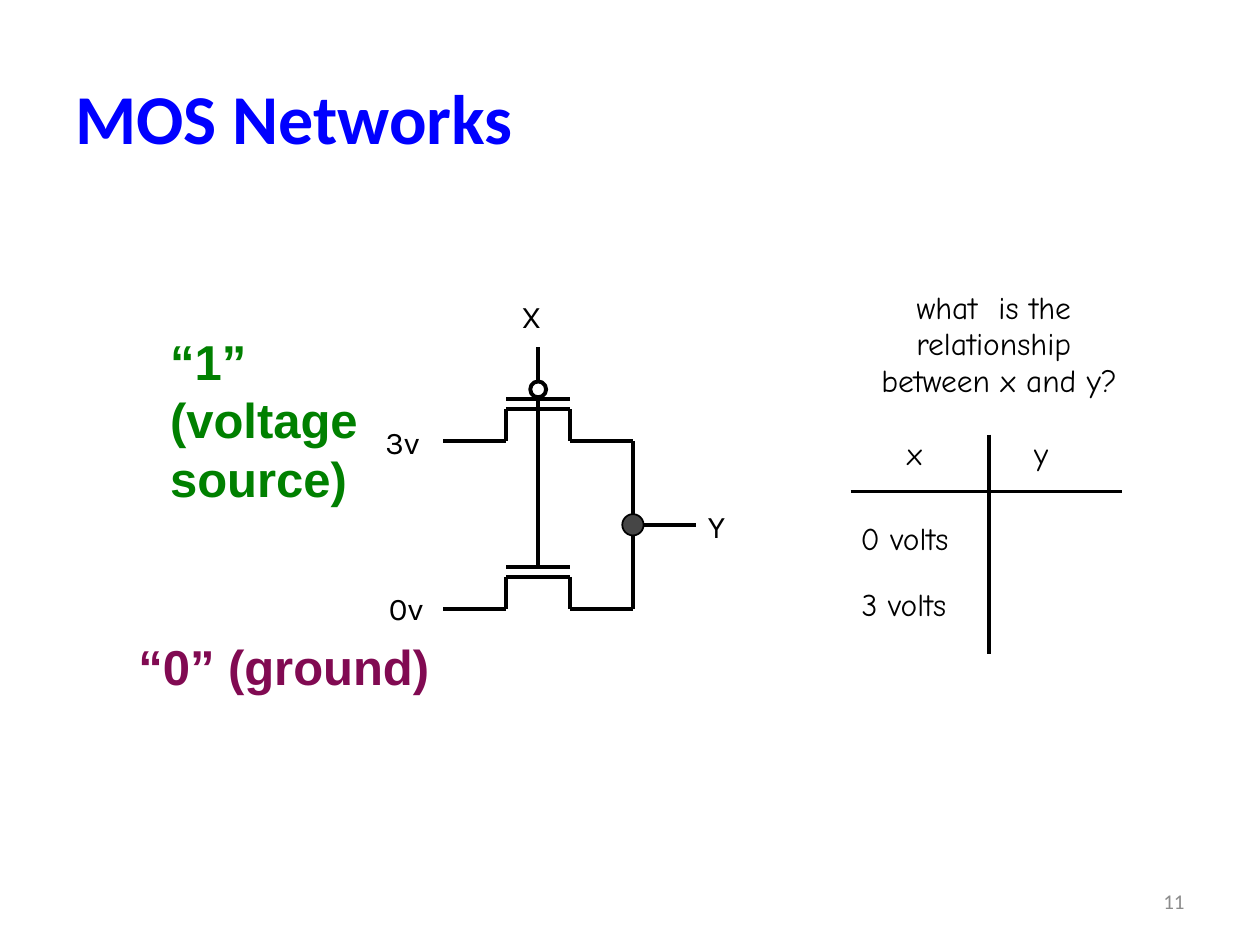
from lxml.etree import SubElement
from pptx import Presentation
from pptx.dml.color import RGBColor
from pptx.enum.shapes import MSO_CONNECTOR as Connector, MSO_SHAPE as Shape
from pptx.enum.text import MSO_ANCHOR as Anchor, PP_ALIGN as Align
from pptx.oxml.ns import qn
from pptx.util import Cm, Pt

BLACK = RGBColor(0x00, 0x00, 0x00)
WHITE = RGBColor(0xFF, 0xFF, 0xFF)
BLUE = RGBColor(0x00, 0x00, 0xFF)
GREEN = RGBColor(0x00, 0x80, 0x00)
PLUM = RGBColor(0x81, 0x0A, 0x52)
DARK_GRAY = RGBColor(0x46, 0x46, 0x46)
LIGHT_GRAY = RGBColor(0x8C, 0x8C, 0x8C)

GATE_X = 10.85
HALF_CHANNEL = 0.64
LEAD = 1.27
OUTPUT_X = GATE_X + HALF_CHANNEL + LEAD
SOURCE_Y, GROUND_Y = 8.89, 12.27
OUTPUT_Y = 10.58

TITLE = {"name": "Calibri", "size": Pt(40), "bold": True}
CALLOUT = {"name": "Arial", "size": Pt(28), "bold": True}
PIN = {"name": "Karla", "size": Pt(18)}
QUESTION = {"name": "Comic Neue", "size": Pt(18)}
NUMBER = {"name": "Calibri", "size": Pt(12)}


def add_text(page, text, place, font, color, frame_format=None, para_format=None):
    box = page.shapes.add_textbox(*map(Cm, place))
    frame = box.text_frame
    for name, value in (frame_format or {}).items():
        setattr(frame, name, value)
    para = frame.paragraphs[0]
    para.text = text
    for name, value in (para_format or {}).items():
        setattr(para, name, value)
    for span in para.runs:
        for name, value in font.items():
            setattr(span.font, name, value)
        span.font.color.rgb = color


def add_label(page, text, place, font, alignment=Align.LEFT):
    frame_format = {"word_wrap": False, "margin_left": Cm(0.05), "margin_right": Cm(0.05),
                    "margin_top": Cm(0.08), "margin_bottom": Cm(0.08)}
    add_text(page, text, place, font, BLACK, frame_format,
             {"alignment": alignment, "line_spacing": Pt(21)})


def add_wire(page, points, width=2.25):
    for start, end in zip(points, points[1:]):
        wire = page.shapes.add_connector(Connector.STRAIGHT, *map(Cm, start + end))
        wire.line.color.rgb = BLACK
        wire.line.width = Pt(width)
        SubElement(wire._element.spPr, qn("a:effectLst"))


def add_circle(page, x, y, diameter, fill, width):
    corner = (x - diameter / 2, y - diameter / 2)
    circle = page.shapes.add_shape(Shape.OVAL, *map(Cm, corner + (diameter, diameter)))
    circle.shadow.inherit = False
    circle.fill.solid()
    circle.fill.fore_color.rgb = fill
    circle.line.color.rgb = BLACK
    circle.line.width = Pt(width)


def add_transistor(page, base, inverted):
    left, right = GATE_X - HALF_CHANNEL, GATE_X + HALF_CHANNEL
    channel, gate = base - 0.64, base - 0.84
    add_wire(page, [(left - LEAD, base), (left, base), (left, channel),
                    (right, channel), (right, base), (OUTPUT_X, base)])
    add_wire(page, [(left, gate), (right, gate)])
    add_wire(page, [(GATE_X, gate), (GATE_X, gate - 0.63)])
    if inverted:
        add_circle(page, GATE_X, gate - 0.2, 0.32, WHITE, 2.25)


def add_circuit(page):
    add_wire(page, [(GATE_X, 11.02), (GATE_X, 6.99)])
    add_wire(page, [(OUTPUT_X, SOURCE_Y), (OUTPUT_X, GROUND_Y)])
    add_wire(page, [(OUTPUT_X, OUTPUT_Y), (OUTPUT_X + LEAD, OUTPUT_Y)])
    add_transistor(page, GROUND_Y, inverted=False)
    add_transistor(page, SOURCE_Y, inverted=True)
    add_circle(page, OUTPUT_X, OUTPUT_Y, 0.43, DARK_GRAY, 1)
    for text, left, top in (("X", 10.46, 5.92), ("Y", 14.22, 10.16),
                            ("3v", 7.72, 8.46), ("0v", 7.79, 11.81)):
        add_label(page, text, (left, top, 1, 1.14), PIN)


def add_truth_table(page):
    add_wire(page, [(17.15, 9.91), (22.61, 9.91)], 2)
    add_wire(page, [(19.94, 8.76), (19.94, 13.18)], 2)
    for text, left, top, width in (("x", 18.24, 8.69, 1), ("y", 20.8, 8.69, 1),
                                   ("0 volts", 17.3, 10.41, 2.46),
                                   ("3 volts", 17.32, 11.73, 2.46)):
        add_label(page, text, (left, top, width, 1.14), QUESTION)
    add_label(page, "what  is the \nrelationship \nbetween x and y?",
              (17.22, 5.74, 5.84, 2.62), QUESTION, Align.CENTER)


def main():
    deck = Presentation()
    deck.slide_width, deck.slide_height = Cm(25.4), Cm(19.05)
    page = deck.slides.add_slide(deck.slide_layouts[6])
    middle = {"word_wrap": True, "vertical_anchor": Anchor.MIDDLE}
    add_text(page, "MOS Networks", (1.27, 0.76, 22.86, 3.18), TITLE, BLUE, middle)
    add_circuit(page)
    add_truth_table(page)
    no_wrap = {"word_wrap": False}
    add_text(page, "“0” (ground)", (2.54, 12.7, 6.38, 1.45), CALLOUT, PLUM, no_wrap)
    add_text(page, "“1” \n(voltage\nsource)", (3.18, 6.55, 4.34, 3.84),
             CALLOUT, GREEN, no_wrap)
    add_text(page, "11", (18.21, 17.65, 5.92, 1.02), NUMBER, LIGHT_GRAY,
             middle, {"alignment": Align.RIGHT})
    deck.save("out.pptx")


if __name__ == "__main__":
    main()
